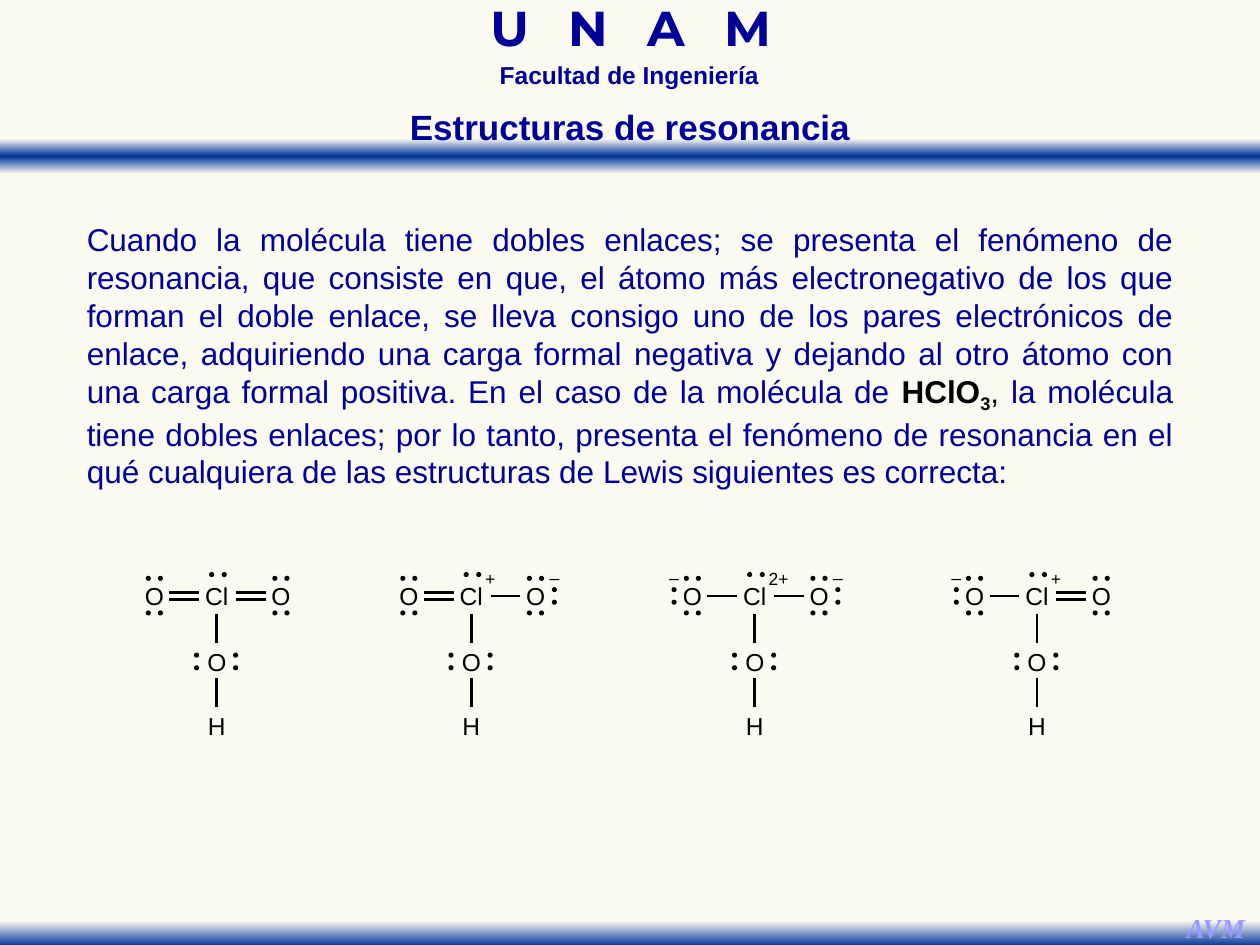
from copy import deepcopy

from pptx import Presentation
from pptx.dml.color import RGBColor
from pptx.enum.shapes import MSO_CONNECTOR, MSO_SHAPE
from pptx.enum.text import MSO_ANCHOR, MSO_AUTO_SIZE, PP_ALIGN
from pptx.oxml.ns import qn
from pptx.util import Inches, Pt

COLORS = {
    "background": "FAFAF0",
    "fade": "FAFAF2",
    "band": "003399",
    "navy": "000099",
    "black": "000000",
    "signature": "9999FF",
}

presentation = Presentation()
presentation.slide_width = Inches(10)
presentation.slide_height = Inches(7.5)
slide = presentation.slides.add_slide(presentation.slide_layouts[6])
slide.background.fill.solid()
slide.background.fill.fore_color.rgb = RGBColor.from_string(COLORS["background"])

# Grid of 100 columns by 75 rows
COLUMN = presentation.slide_width / 100
ROW = presentation.slide_height / 75


def place(left, top, width, height):
    return [round(left * COLUMN), round(top * ROW), round(width * COLUMN), round(height * ROW)]


def write_text(shapes, runs, box, size=14, font="Arial", color="black", bold=False,
               italic=False, align=PP_ALIGN.CENTER, anchor=MSO_ANCHOR.TOP,
               line_spacing=None, wrap=False, inset=None):
    """Add a text box; runs is a string or a list of (text, format) pairs."""
    shape = shapes.add_textbox(*place(*box))
    frame = shape.text_frame
    frame.word_wrap = wrap
    frame.auto_size = MSO_AUTO_SIZE.SHAPE_TO_FIT_TEXT
    frame.vertical_anchor = anchor
    if inset is not None:
        frame.margin_left = frame.margin_right = round(inset * COLUMN)
        frame.margin_top = frame.margin_bottom = round(inset * ROW)
    paragraph = frame.paragraphs[0]
    paragraph.alignment = align
    if line_spacing:
        paragraph.line_spacing = line_spacing
    for text, style in [(runs, {})] if isinstance(runs, str) else runs:
        run = paragraph.add_run()
        run.text = text
        run.font.name = font
        run.font.size = Pt(size)
        run.font.bold = style.get("bold", bold)
        run.font.italic = italic
        run.font.color.rgb = RGBColor.from_string(COLORS[style.get("color", color)])
        for attribute in ("baseline", "spc"):
            if attribute in style:
                run.font._element.set(attribute, style[attribute])


# Gradient bands
bands = [
    (11, [(0, "fade"), (0.5, "band"), (1, "fade")]),
    (72.3, [(0.28, "fade"), (1, "band")]),
]
for top, stops in bands:
    band = slide.shapes.add_shape(MSO_SHAPE.RECTANGLE, *place(0, top, 100, 2.8))
    band.shadow.inherit = False
    band.line.fill.background()
    band.fill.gradient()
    band.fill.gradient_angle = 270
    stop_list = next(band._element.iter(qn("a:gsLst")))
    while len(stop_list) < len(stops):
        stop_list.append(deepcopy(stop_list[0]))
    for gradient_stop, (position, color) in zip(band.fill.gradient_stops, stops):
        gradient_stop.position = position
        gradient_stop.color.rgb = RGBColor.from_string(COLORS[color])

# Heading and signature
write_text(slide.shapes, [("U N A ", {"spc": "730"}), ("M", {})], (30.5, 0.6, 39.1, 4.3),
           size=28, font="Montserrat", color="navy", bold=True, line_spacing=0.7, wrap=True)
write_text(slide.shapes, "Facultad de Ingeniería", (32.1, 4.9, 35.7, 2.7),
           color="navy", bold=True, line_spacing=0.7, wrap=True)
write_text(slide.shapes, "AVM", (93.1, 71.8, 6.8, 3.7), size=15.6,
           font="Times New Roman", color="signature", bold=True, italic=True)

# Explanation
explanation = [
    ("Cuando la molécula tiene dobles enlaces; se presenta el fenómeno de resonancia, "
     "que consiste en que, el átomo más electronegativo de los que forman el doble enlace, "
     "se lleva consigo uno de los pares electrónicos de enlace, adquiriendo una carga formal "
     "negativa y dejando al otro átomo con una carga formal positiva. En el caso de la "
     "molécula de ", {}),
    ("HClO", {"color": "black", "bold": True}),
    ("3", {"color": "black", "bold": True, "baseline": "-25000"}),
    (", ", {"color": "black"}),
    ("la molécula tiene dobles enlaces; por lo tanto, presenta el fenómeno de resonancia "
     "en el qué cualquiera de las estructuras de Lewis siguientes es correcta:", {}),
]
write_text(slide.shapes, explanation, (5.9, 17, 88.2, 22.2), size=18, color="navy",
           align=PP_ALIGN.JUSTIFY, wrap=True)

# Lewis structures: centre column, left bond order, right bond order, chlorine charge
structures = [(17.2, 2, 2, ""), (37.4, 2, 1, "+"), (59.9, 1, 1, "2+"), (82.3, 1, 2, "+")]
DOT = 0.4
for center, left_order, right_order, chlorine_charge in structures:
    # Offsets from the centre column: (text, offset, top, width, height, size)
    labels = [
        ("Cl", 0, 45.7, 2.7, 3.2, 14),
        ("O", 0, 50.9, 2.3, 3.2, 14),
        ("H", 0, 56, 2.4, 3.2, 14),
    ]
    bonds = [(0, 48.7, 0, 51), (0, 53.8, 0, 56.1)]
    dots = [(x, 45.6) for x in (-0.4, 0.6)]
    dots += [(x, y) for x in (-1.6, 1.5) for y in (52, 53)]
    if chlorine_charge:
        charge_width = 0.8 + 0.8 * len(chlorine_charge)
        labels.append((chlorine_charge, 0.7 + charge_width / 2, 44.7, charge_width, 2.5, 10))

    # Oxygen on each side: bond order, atom offset, bond ends, side pair offset
    sides = [(left_order, -4.95, -3.75, -1.4, -6.4), (right_order, 5.1, 1.55, 3.9, 6.6)]
    for order, atom, bond_start, bond_end, pair in sides:
        labels.append(("O", atom, 45.7, 2.3, 3.2, 14))
        dots += [(atom + x, y) for x in (-0.48, 0.48) for y in (45.9, 48.65)]
        bond_rows = [47, 47.6] if order == 2 else [47.3]
        bonds += [(bond_start, y, bond_end, y) for y in bond_rows]
        if order == 1:
            dots += [(pair, y) for y in (46.8, 47.8)]
            labels.append(("–", pair, 44.6, 1.6, 2.5, 10))

    group = slide.shapes.add_group_shape()
    for text, offset, top, width, height, size in labels:
        write_text(group.shapes, text, (center + offset - width / 2, top, width, height),
                   size=size, anchor=MSO_ANCHOR.MIDDLE, inset=0.4)
    for start_x, start_y, end_x, end_y in bonds:
        bond = group.shapes.add_connector(
            MSO_CONNECTOR.STRAIGHT,
            round((center + start_x) * COLUMN), round(start_y * ROW),
            round((center + end_x) * COLUMN), round(end_y * ROW))
        bond.line.color.rgb = RGBColor.from_string(COLORS["black"])
        bond.line.width = Pt(1.5)
        bond._element.spPr.append(bond._element.makeelement(qn("a:effectLst"), {}))
    for x, y in dots:
        dot = group.shapes.add_shape(
            MSO_SHAPE.OVAL, *place(center + x - DOT / 2, y - DOT / 2, DOT, DOT))
        dot.shadow.inherit = False
        dot.fill.solid()
        dot.fill.fore_color.rgb = RGBColor.from_string(COLORS["black"])
        dot.line.fill.background()

# Slide title
write_text(slide.shapes, "Estructuras de resonancia", (31.4, 7.9, 37.2, 4.4), size=20,
           color="navy", bold=True)

presentation.save("out.pptx")
